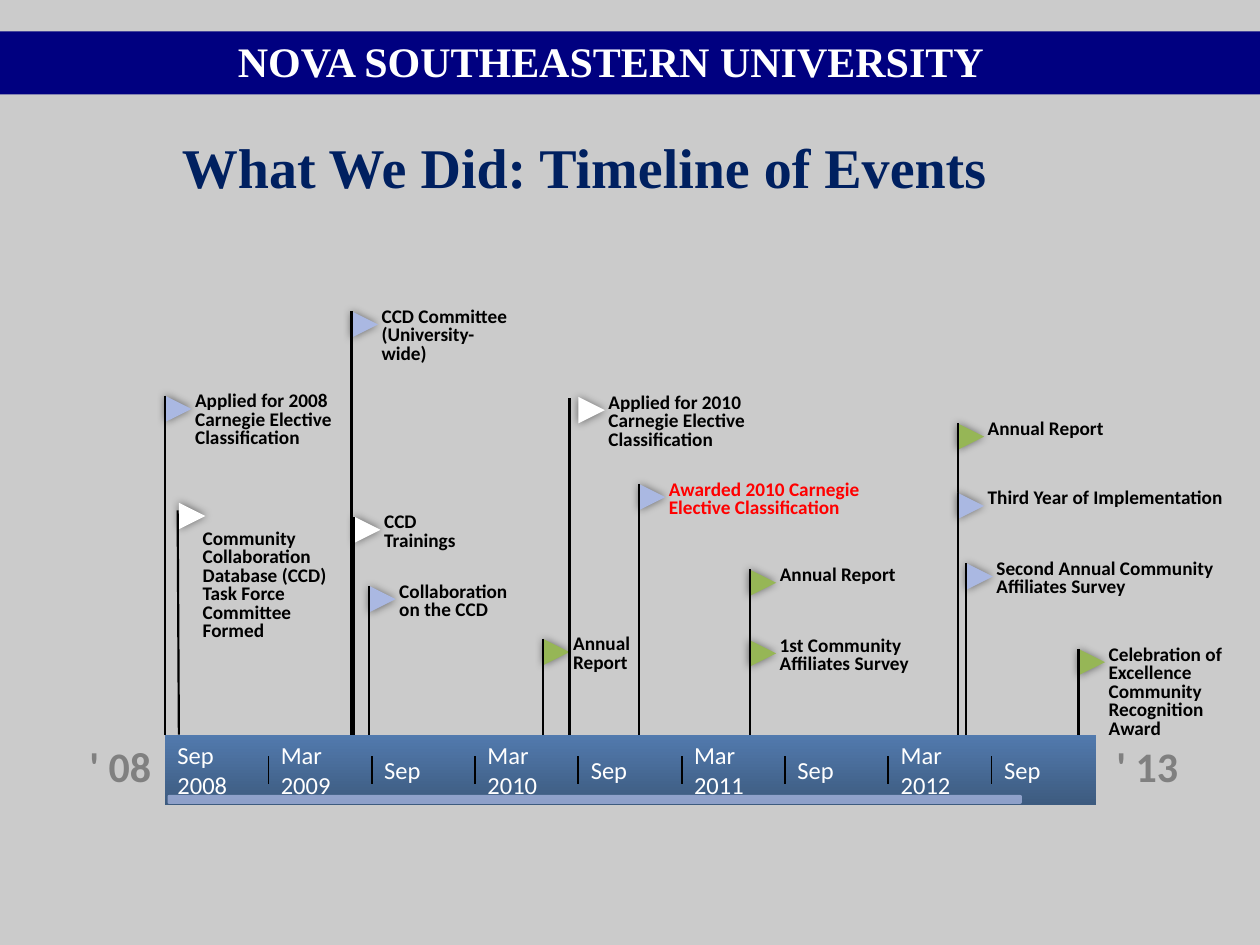
"""Build the timeline slide of community collaboration events."""
from dataclasses import dataclass

from lxml import etree
from pptx import Presentation, util as u
from pptx.dml.color import RGBColor
from pptx.enum import shapes, text
from pptx.oxml import ns, parse_xml


@dataclass(frozen=True)
class Theme:
    background: str = "CBCBCB"
    band: str = "000080"
    title: str = "002060"
    white: str = "FFFFFF"
    black: str = "000000"
    grey: str = "808080"
    red: str = "FF0000"
    blue: str = "AAB8E2"
    green: str = "96B656"
    bar_top: str = "527AAE"
    bar_bottom: str = "3D5B7F"
    serif: str = "Times New Roman"
    sans: str = "Calibri"
    title_size: int = 32
    head_size: int = 24
    month_size: int = 14
    event_size: int = 11


@dataclass(frozen=True)
class Event:
    x: float
    y: float
    width: float
    height: float
    fill: str
    label: str
    ink: str = Theme.black
    pole_dx: float = 0
    pole_dy: float = 0
    pole_lean: float = 0
    label_dx: float = 0.14
    label_dy: float = -0.07


theme = Theme()
bar_left, bar_top, bar_width, bar_height = 1.31, 5.83, 7.39, 0.56
pitch = 0.82
flag_size = 0.21

events = [
    Event(1.31, 3.14, 1.34, 0.5, theme.blue, "Applied for 2008 Carnegie Elective Classification"),
    Event(1.42, 3.99, 1.22, 0.87, theme.white,
          "Community Collaboration Database (CCD) Task Force Committee Formed",
          pole_dx=-0.01, pole_dy=0.06, pole_lean=0.01, label_dx=0.09, label_dy=0.17),
    Event(2.79, 2.47, 1.22, 0.52, theme.blue, "CCD Committee (University-wide)"),
    Event(2.81, 4.1, 0.97, 0.37, theme.white, "CCD Trainings"),
    Event(2.93, 4.65, 1.08, 0.49, theme.blue, "Collaboration on the CCD"),
    Event(4.31, 5.07, 0.68, 0.36, theme.green, "Annual Report"),
    Event(4.59, 3.15, 1.56, 0.49, theme.white,
          "Applied for 2010 Carnegie Elective Classification", pole_dx=-0.07, pole_dy=0.01),
    Event(5.07, 3.84, 1.84, 0.38, theme.blue,
          "Awarded 2010 Carnegie Elective Classification", ink=theme.red),
    Event(5.95, 4.52, 2.15, 0.29, theme.green, "Annual Report"),
    Event(5.95, 5.08, 1.37, 0.49, theme.green, "1st Community Affiliates Survey"),
    Event(7.6, 3.36, 2.15, 0.29, theme.green, "Annual Report"),
    Event(7.6, 3.91, 2.15, 0.29, theme.blue, "Third Year of Implementation"),
    Event(7.67, 4.47, 2.15, 0.29, theme.blue, "Second Annual Community Affiliates Survey"),
    Event(8.56, 5.15, 1.38, 0.75, theme.green,
          "Celebration of Excellence Community Recognition Award"),
]
months = ["Sep\v2008", "Mar\v2009", "Sep", "Mar\v2010", "Sep", "Mar\v2011", "Sep", "Mar\v2012", "Sep"]

prs = Presentation()
prs.slide_width, prs.slide_height = u.Inches(10), u.Inches(7.5)
s = prs.slides.add_slide(prs.slide_layouts[6])
s.background.fill.solid()
s.background.fill.fore_color.rgb = RGBColor.from_string(theme.background)


def add_text(words, left, top, width, height, size, color, font=theme.sans, bold=True,
             wrap=True, grow=False, align=text.PP_ALIGN.LEFT, spacing=1.0):
    sp = s.shapes.add_textbox(*map(u.Inches, (left, top, width, height)))
    tf = sp.text_frame
    tf.word_wrap = wrap
    tf.auto_size = text.MSO_AUTO_SIZE.SHAPE_TO_FIT_TEXT if grow else text.MSO_AUTO_SIZE.NONE
    p = tf.paragraphs[0]
    p.text = words
    p.alignment = align
    p.line_spacing = spacing
    p.font.name, p.font.size, p.font.bold = font, u.Pt(size), bold
    p.font.color.rgb = RGBColor.from_string(color)
    return tf


def add_line(x1, y1, x2, y2, weight):
    line = s.shapes.add_connector(shapes.MSO_CONNECTOR.STRAIGHT, *map(u.Inches, (x1, y1, x2, y2)))
    line.line.width = u.Pt(weight)
    line.line.color.rgb = RGBColor.from_string(theme.black)
    etree.SubElement(line._element.spPr, ns.qn("a:effectLst"))


band = s.shapes.add_shape(shapes.MSO_SHAPE.RECTANGLE, 0, u.Inches(0.25), prs.slide_width, u.Inches(0.5))
band.shadow.inherit = False
band.fill.solid()
band.fill.fore_color.rgb = RGBColor.from_string(theme.band)
band.line.fill.background()
add_text("NOVA SOUTHEASTERN UNIVERSITY", 1.79, 0.19, 6.46, 0.54, theme.head_size, theme.white,
         theme.serif, wrap=False, grow=True, spacing=1.1)

for event in events:
    flag = s.shapes.add_shape(shapes.MSO_SHAPE.FLOWCHART_MERGE,
                              *map(u.Inches, (event.x, event.y, flag_size, flag_size)))
    flag.rotation = 270
    flag.fill.solid()
    flag.fill.fore_color.rgb = RGBColor.from_string(event.fill)
    flag.line.fill.background()
    flag._element.spPr.append(parse_xml(
        f'<a:effectLst {ns.nsdecls("a")}><a:outerShdw blurRad="{u.Pt(5)}" dist="0" dir="0">'
        f'<a:srgbClr val="{theme.black}"><a:alpha val="50000"/></a:srgbClr>'
        '</a:outerShdw></a:effectLst>'))
    pole_x = event.x + event.pole_dx
    add_line(pole_x, event.y + event.pole_dy, pole_x + event.pole_lean, bar_top, 1.25)

add_text("What We Did: Timeline of Events", 1.17, 1, 6.94, 0.64, theme.title_size, theme.title,
         theme.serif, grow=True, align=text.PP_ALIGN.CENTER)

bar = s.shapes.add_shape(shapes.MSO_SHAPE.RECTANGLE,
                         *map(u.Inches, (bar_left, bar_top, bar_width, bar_height)))
bar.shadow.inherit = False
bar.fill.gradient()
bar.fill.gradient_angle = 270
for stop, position, color in zip(bar.fill.gradient_stops, (0, 1), (theme.bar_top, theme.bar_bottom)):
    stop.position = position
    stop.color.rgb = RGBColor.from_string(color)
bar.line.fill.background()

for i, month in enumerate(months):
    x = bar_left + pitch * i
    if i:
        add_line(x, 6, x, 6.22, 1)
    tf = add_text(month, x, bar_top, pitch, bar_height, theme.month_size, theme.white,
                  bold=False, wrap=False)
    tf.vertical_anchor = text.MSO_ANCHOR.MIDDLE

for year, x in (("' 08", 0.61), ("' 13", 8.76)):
    add_text(year, x, bar_top, 0.69, 0.5, theme.head_size, theme.grey,
             wrap=False, grow=True, align=text.PP_ALIGN.CENTER)

progress = s.shapes.add_shape(shapes.MSO_SHAPE.ROUNDED_RECTANGLE,
                              *map(u.Inches, (1.33, 6.31, 6.78, 0.07)))
progress.shadow.inherit = False
progress.fill.solid()
progress.fill.fore_color.rgb = RGBColor.from_string(theme.blue)
progress.line.fill.background()
tint = progress._element.spPr.find(ns.qn("a:solidFill")).find(ns.qn("a:srgbClr"))
etree.SubElement(tint, ns.qn("a:alpha"), val="75000")

for event in reversed(events):
    add_text(event.label, event.x + event.label_dx, event.y + event.label_dy, event.width,
             event.height, theme.event_size, event.ink, spacing=0.8)

prs.save("out.pptx")
